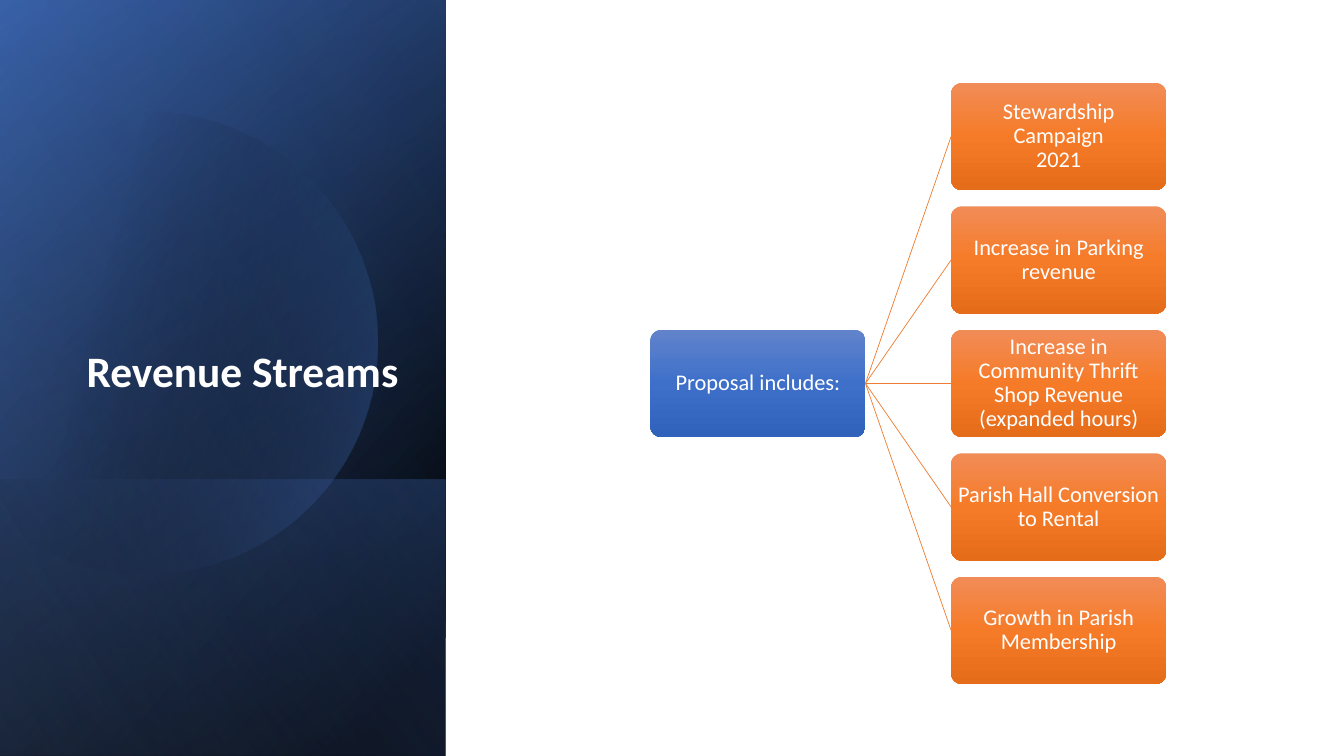
from math import cos, radians, sin

from lxml.etree import SubElement
from pptx import Presentation
from pptx.dml.color import RGBColor
from pptx.enum.shapes import MSO_CONNECTOR, MSO_SHAPE
from pptx.enum.text import MSO_ANCHOR, PP_ALIGN
from pptx.oxml.ns import qn
from pptx.util import Pt

WHITE = RGBColor(0xFF, 0xFF, 0xFF)
BLACK = RGBColor(0x00, 0x00, 0x00)
NAVY = RGBColor(0x2F, 0x55, 0x97)
BLUE = RGBColor(0x44, 0x72, 0xC4)
PALE = RGBColor(0x8F, 0xAA, 0xDC)
ORANGE = RGBColor(0xED, 0x7D, 0x31)
BLUES = [RGBColor(0x61, 0x83, 0xCB), RGBColor(0x3E, 0x70, 0xCA), RGBColor(0x30, 0x62, 0xBB)]
WARMS = [RGBColor(0xF1, 0x8C, 0x57), RGBColor(0xF6, 0x7B, 0x28), RGBColor(0xE5, 0x6C, 0x19)]


def shade(shape, stops, angle):
    shape.shadow.inherit = False
    shape.line.fill.background()
    shape.fill.background()
    props = shape._element.spPr
    grad = props.makeelement(qn("a:gradFill"), {"rotWithShape": "1"})
    props.replace(props.find(qn("a:noFill")), grad)
    group = SubElement(grad, qn("a:gsLst"))
    for place, color, alpha in stops:
        stop = SubElement(group, qn("a:gs"), pos=str(place * 1000))
        tint = SubElement(stop, qn("a:srgbClr"), val=str(color))
        if alpha < 100:
            SubElement(tint, qn("a:alpha"), val=str(alpha * 1000))
    SubElement(grad, qn("a:lin"), ang=str(angle * 60000), scaled="0")


def write(shape, text, size, bold, align, frame_set):
    frame = shape.text_frame
    frame.word_wrap = True
    for name, value in frame_set.items():
        setattr(frame, name, value)
    frame.text = text
    para = frame.paragraphs[0]
    para.alignment = align
    para.line_spacing = 0.9
    font_set = {"name": "Calibri", "size": Pt(size), "bold": bold}
    for run in para.runs:
        for name, value in font_set.items():
            setattr(run.font, name, value)
        run.font.color.rgb = WHITE


deck = Presentation()
deck.slide_width = Pt(960)
deck.slide_height = Pt(540)
slide = deck.slides.add_slide(deck.slide_layouts[6])
shapes = slide.shapes

SIDE = 318.4
FULL = 540
LOW = 197.2
panels = [
    (FULL, [(8, BLACK, 100), (100, NAVY, 100)], 50),
    (FULL, [(0, BLACK, 0), (99, BLUE, 46)], 30),
    (LOW, [(2, BLUE, 29), (100, BLACK, 30)], 130),
    None,
    (FULL, [(0, BLACK, 0), (99, PALE, 11)], 120),
]
for panel in panels:
    if panel:
        tall, stops, angle = panel
        left = (SIDE - tall) / 2
        top = FULL - (tall + SIDE) / 2
        rect = shapes.add_shape(MSO_SHAPE.RECTANGLE, Pt(left), Pt(top), Pt(tall), Pt(SIDE))
        rect.rotation = 90
        rect._element.spPr.find(qn("a:xfrm")).set("flipH", "1")
        shade(rect, stops, angle)
    else:
        dots = [
            (Pt(104.4 + 165 * cos(radians(turn))), Pt(245 + 165 * sin(radians(turn))))
            for turn in range(-129, 130, 2)
        ]
        pen = shapes.build_freeform(*dots[0])
        pen.add_line_segments(dots[1:], close=True)
        shade(pen.convert_to_shape(), [(29, BLACK, 0), (100, BLUE, 43)], 14)

title = shapes.add_textbox(Pt(46), Pt(132.5), Pt(245.5), Pt(188.6))
title_set = {"vertical_anchor": MSO_ANCHOR.BOTTOM, "margin_bottom": Pt(37.6)}
write(title, "Revenue Streams", 31, True, PP_ALIGN.RIGHT, title_set)

WIDE, HIGH, TOP, STEP = 153.6, 76.6, 59.2, 88.2
ROOT, LEAF = 464.6, 679.4
streams = [
    "Stewardship Campaign\v2021",
    "Increase in Parking\vrevenue",
    "Increase in Community Thrift Shop Revenue (expanded hours)",
    "Parish Hall Conversion to Rental",
    "Growth in Parish Membership",
]
nodes = [("Proposal includes:", ROOT, 2, BLUES)]
nodes += [(text, LEAF, row, WARMS) for row, text in enumerate(streams)]
box_set = {"vertical_anchor": MSO_ANCHOR.MIDDLE}
for edge in ("left", "top", "right", "bottom"):
    box_set["margin_" + edge] = Pt(0.8)

boxes = []
for text, left, row, colors in nodes:
    box = shapes.add_shape(
        MSO_SHAPE.ROUNDED_RECTANGLE, Pt(left), Pt(TOP + row * STEP), Pt(WIDE), Pt(HIGH)
    )
    box.adjustments[0] = 0.1
    shade(box, [(50 * n, color, 100) for n, color in enumerate(colors)], 90)
    write(box, text, 16, False, PP_ALIGN.CENTER, box_set)
    boxes.append(box)

root, *leaves = boxes
for leaf in leaves:
    link = shapes.add_connector(MSO_CONNECTOR.STRAIGHT, 0, 0, 0, 0)
    link.begin_connect(root, 3)
    link.end_connect(leaf, 1)
    link.line.color.rgb = ORANGE
    link.line.width = Pt(0.5)
    SubElement(link._element.spPr, qn("a:effectLst"))

deck.save("out.pptx")
